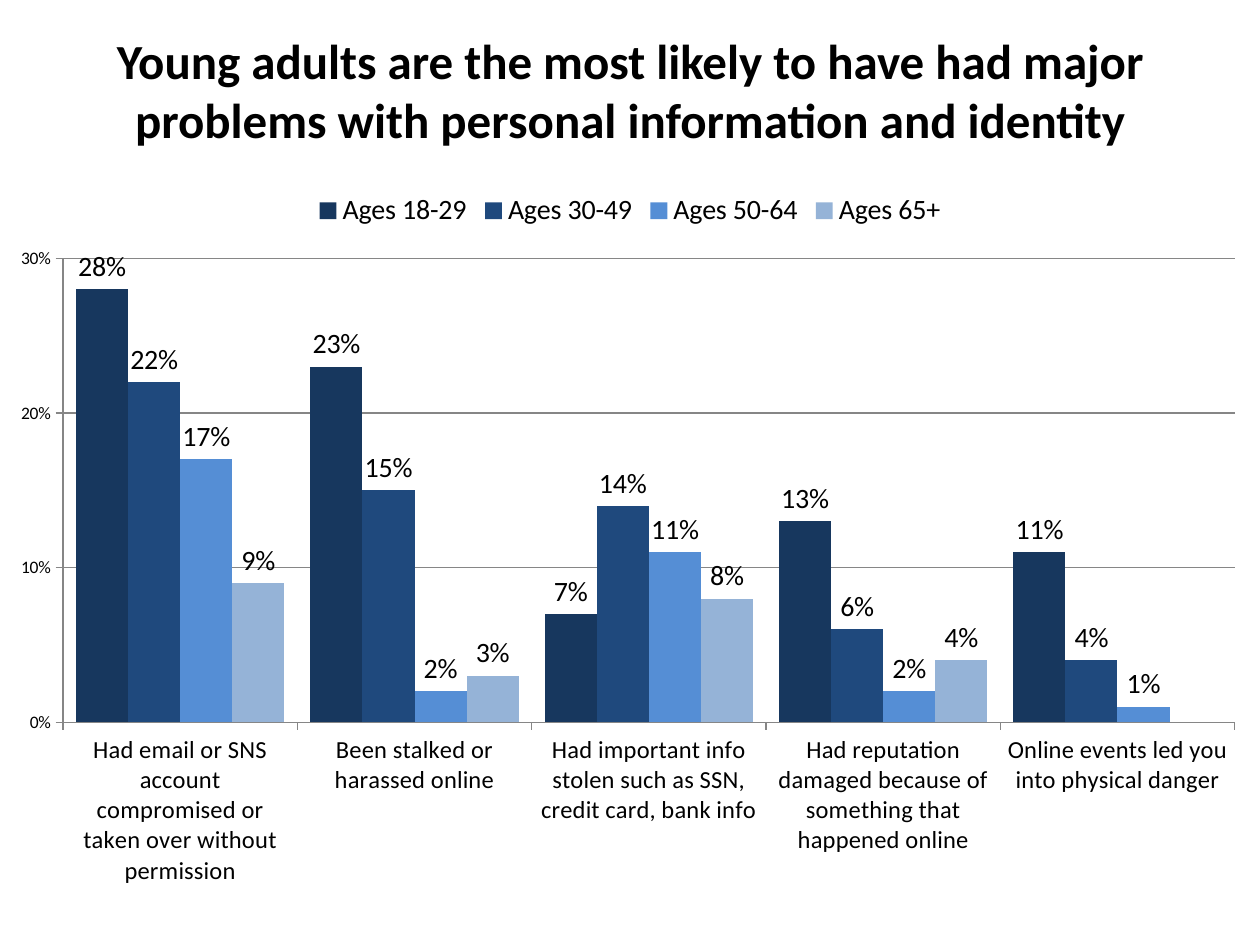
from lxml import etree
from pptx import Presentation
from pptx.chart.data import CategoryChartData as ChartData
from pptx.dml.color import RGBColor
from pptx.enum.chart import XL_CHART_TYPE as ChartType
from pptx.enum.chart import XL_LABEL_POSITION as LabelPosition
from pptx.enum.chart import XL_LEGEND_POSITION as LegendPosition
from pptx.enum.chart import XL_TICK_MARK as TickMark
from pptx.enum.text import MSO_ANCHOR as Anchor
from pptx.enum.text import PP_ALIGN as Align
from pptx.oxml.ns import qn
from pptx.util import Inches, Pt

FONT = "Calibri"
PERCENT = "0%"
BLACK = RGBColor(0x00, 0x00, 0x00)
GRAY = RGBColor(0x86, 0x86, 0x86)
TITLE = ("Young adults are the most likely to have had major "
         "problems with personal information and identity")
PROBLEMS = [
    "Had email or SNS account compromised or taken over without permission",
    "Been stalked or harassed online",
    "Had important info stolen such as SSN, credit card, bank info",
    "Had reputation damaged because of something that happened online",
    "Online events led you into physical danger",
]
AGE_GROUPS = [
    ("Ages 18-29", [0.28, 0.23, 0.07, 0.13, 0.11], RGBColor(0x17, 0x37, 0x5E)),
    ("Ages 30-49", [0.22, 0.15, 0.14, 0.06, 0.04], RGBColor(0x1F, 0x49, 0x7D)),
    ("Ages 50-64", [0.17, 0.02, 0.11, 0.02, 0.01], RGBColor(0x55, 0x8E, 0xD5)),
    ("Ages 65+", [0.09, 0.03, 0.08, 0.04, None], RGBColor(0x95, 0xB3, 0xD7)),
]
PLOT_LAYOUT = {"layoutTarget": "inner", "xMode": "edge", "yMode": "edge",
               "x": 0.05, "y": 0.11, "w": 0.93, "h": 0.64}


def apply_format(target, values):
    """Set every attribute named in values on the target."""
    for name, value in values.items():
        setattr(target, name, value)


def style_font(font, size, bold=False):
    """Give a font the slide's typeface and colour."""
    apply_format(font, {"name": FONT, "size": Pt(size), "bold": bold})
    font.color.rgb = BLACK


def style_line(line):
    """Draw a thin gray line."""
    line.color.rgb = GRAY
    line.width = Pt(0.75)


def add_title(slide):
    """Add the centred headline."""
    shape = slide.shapes.add_textbox(Inches(0.5), Inches(0.3), Inches(9), Inches(1.25))
    frame = shape.text_frame
    apply_format(frame, {"word_wrap": True, "vertical_anchor": Anchor.MIDDLE,
                         "margin_bottom": Inches(0.48)})
    paragraph = frame.paragraphs[0]
    paragraph.alignment = Align.CENTER
    run = paragraph.add_run()
    run.text = TITLE
    style_font(run.font, 28, bold=True)


def style_axes(chart):
    """Format the category axis and the percentage axis."""
    for axis, size in ((chart.category_axis, 14), (chart.value_axis, 10)):
        apply_format(axis, {"major_tick_mark": TickMark.OUTSIDE,
                            "minor_tick_mark": TickMark.NONE})
        style_font(axis.tick_labels.font, size)
        style_line(axis.format.line)
    apply_format(chart.value_axis, {"minimum_scale": 0, "maximum_scale": 0.3,
                                    "major_unit": 0.1, "has_major_gridlines": True})
    apply_format(chart.value_axis.tick_labels,
                 {"number_format": PERCENT, "number_format_is_linked": False})
    style_line(chart.value_axis.major_gridlines.format.line)


def style_series(series, color):
    """Colour one age group and label its columns."""
    series.format.fill.solid()
    series.format.fill.fore_color.rgb = color
    labels = series.data_labels
    apply_format(labels, {"show_value": True, "number_format": PERCENT,
                          "number_format_is_linked": False,
                          "position": LabelPosition.OUTSIDE_END})
    style_font(labels.font, 16)


def place_plot(chart):
    """Fix the inner plot area within the chart."""
    area = chart.element.find(".//" + qn("c:plotArea"))
    layout = area.find(qn("c:layout"))
    if layout is None:
        layout = etree.Element(qn("c:layout"))
        area.insert(0, layout)
    manual = etree.SubElement(layout, qn("c:manualLayout"))
    for name, value in PLOT_LAYOUT.items():
        etree.SubElement(manual, qn(f"c:{name}")).set("val", str(value))


def add_problem_chart(slide):
    """Add the clustered columns of problems by age group."""
    data = ChartData(number_format=PERCENT)
    data.categories = PROBLEMS
    for name, values, _ in AGE_GROUPS:
        data.add_series(name, values)
    chart = slide.shapes.add_chart(ChartType.COLUMN_CLUSTERED, Inches(0), Inches(1.42),
                                   Inches(10), Inches(5.75), data).chart
    apply_format(chart, {"has_title": False, "has_legend": True})
    style_font(chart.font, 10)
    apply_format(chart.legend, {"position": LegendPosition.TOP, "include_in_layout": False})
    style_font(chart.legend.font, 16)
    plot = chart.plots[0]
    apply_format(plot, {"gap_width": 50, "overlap": 0, "vary_by_categories": False})
    for series, (_, _, color) in zip(plot.series, AGE_GROUPS):
        style_series(series, color)
    style_axes(chart)
    place_plot(chart)


def main():
    """Build and save the slide."""
    presentation = Presentation()
    apply_format(presentation, {"slide_width": Inches(10), "slide_height": Inches(7.5)})
    slide = presentation.slides.add_slide(presentation.slide_layouts[6])
    add_title(slide)
    add_problem_chart(slide)
    presentation.save("out.pptx")


if __name__ == "__main__":
    main()
